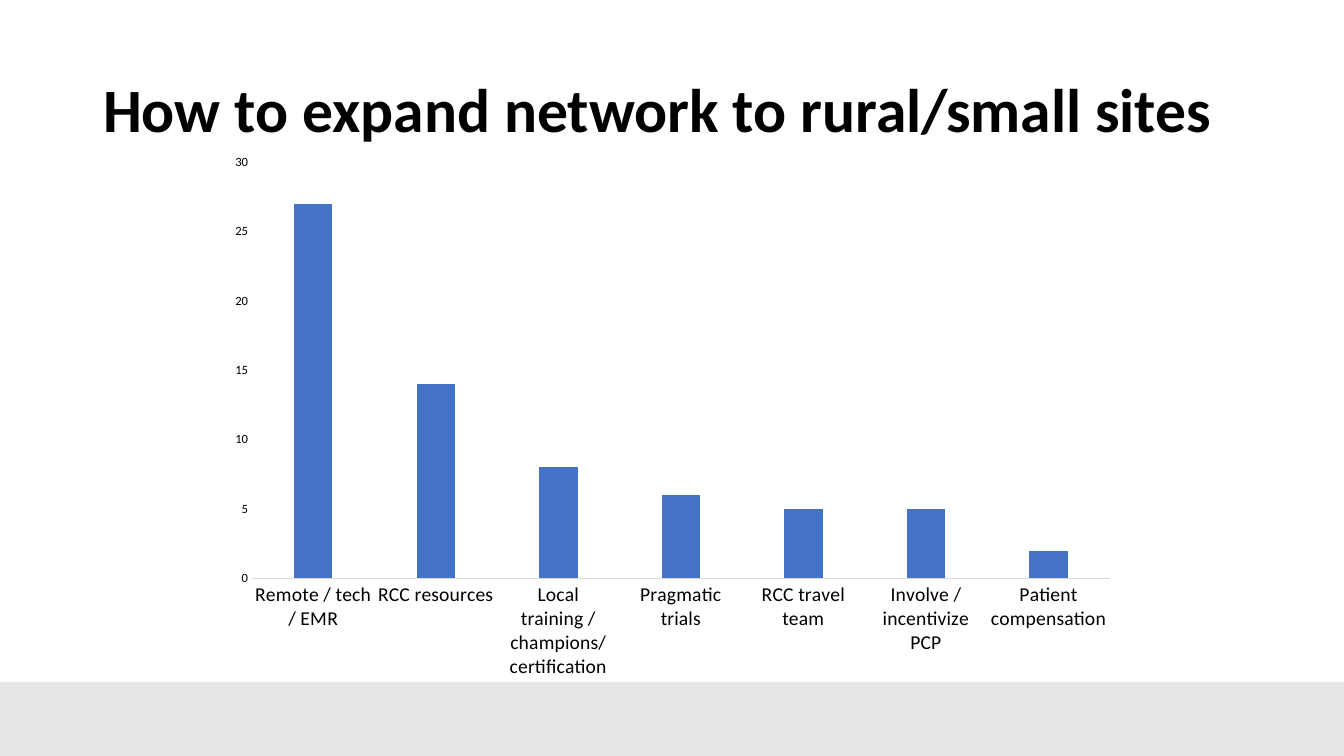
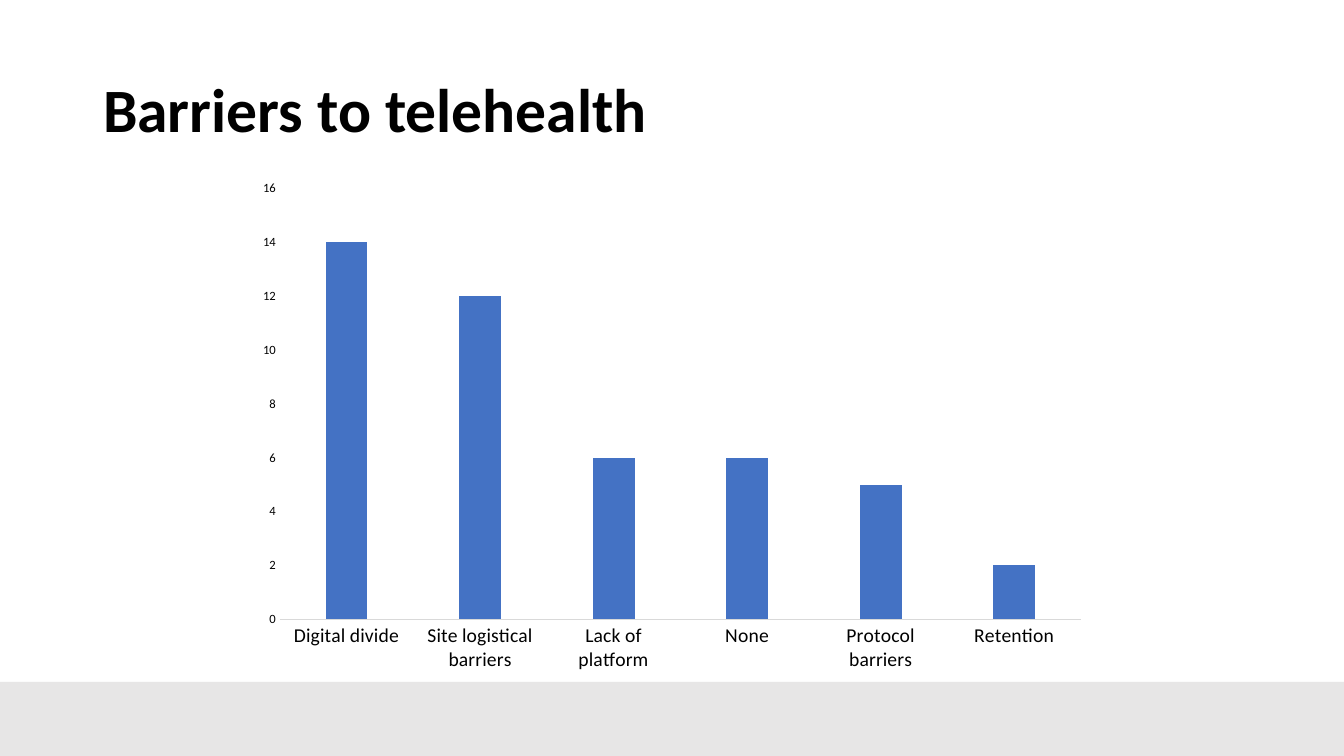
import pptx
import pptx.chart.data
import pptx.dml.color
import pptx.enum.chart
import pptx.enum.shapes
import pptx.enum.text
import pptx.util

SCALE = 914400 / 100.8


def px(count):
    return pptx.util.Emu(round(count * SCALE))


def tint(code):
    return pptx.dml.color.RGBColor.from_string(code)


class Deck:
    """Hold the shared style and the current slide."""

    FACE = "Calibri"
    INK = "000000"
    BAND = "E7E6E6"
    BAR = "4472C4"
    RULE = "D9D9D9"

    def __init__(self, width, height):
        self.file = pptx.Presentation()
        self.file.slide_width = px(width)
        self.file.slide_height = px(height)
        self.width = width
        self.height = height
        self.slide = None

    def style(self, font, size, bold=False):
        font.name = self.FACE
        font.size = pptx.util.Pt(size)
        font.bold = bold
        font.color.rgb = tint(self.INK)

    def page(self, title):
        self.slide = self.file.slides.add_slide(self.file.slide_layouts[5])
        self.band(74)
        self.title(title)

    def band(self, depth):
        band = self.slide.shapes.add_shape(
            pptx.enum.shapes.MSO_SHAPE.RECTANGLE,
            0, px(self.height - depth), px(self.width), px(depth))
        band.shadow.inherit = False
        band.fill.solid()
        band.fill.fore_color.rgb = tint(self.BAND)
        band.line.fill.background()

    def title(self, text):
        title = self.slide.shapes.title
        title.left, title.top = px(93), px(40)
        title.width, title.height = px(1159), px(146)
        frame = title.text_frame
        frame.word_wrap = True
        frame.auto_size = pptx.enum.text.MSO_AUTO_SIZE.NONE
        frame.vertical_anchor = pptx.enum.text.MSO_ANCHOR.MIDDLE
        line = frame.paragraphs[0]
        line.alignment = pptx.enum.text.PP_ALIGN.LEFT
        line.line_spacing = 0.9
        run = line.add_run()
        run.text = text
        self.style(run.font, 44, True)

    def chart(self, box, rows, top, step):
        data = pptx.chart.data.CategoryChartData()
        data.categories = [name for name, _ in rows]
        data.add_series("Series 1", [value for _, value in rows])
        chart = self.slide.shapes.add_chart(
            pptx.enum.chart.XL_CHART_TYPE.COLUMN_CLUSTERED,
            *map(px, box), data).chart
        chart.has_title = False
        chart.has_legend = False
        self.style(chart.font, 10)
        plot = chart.plots[0]
        plot.vary_by_categories = False
        plot.gap_width = 219
        plot.overlap = -27
        fill = plot.series[0].format.fill
        fill.solid()
        fill.fore_color.rgb = tint(self.BAR)
        for axis, size in ((chart.category_axis, 14), (chart.value_axis, 9)):
            axis.has_major_gridlines = False
            axis.major_tick_mark = pptx.enum.chart.XL_TICK_MARK.NONE
            axis.minor_tick_mark = pptx.enum.chart.XL_TICK_MARK.NONE
            self.style(axis.tick_labels.font, size)
        rule = chart.category_axis.format.line
        rule.color.rgb = tint(self.RULE)
        rule.width = pptx.util.Pt(0.75)
        scale = chart.value_axis
        scale.format.line.fill.background()
        scale.minimum_scale = 0
        scale.maximum_scale = top
        scale.major_unit = step


def main():
    deck = Deck(1344, 756)

    deck.page("How to expand network to rural/small sites")
    deck.chart((217, 144, 911, 546), [
        ("Remote / tech / EMR", 27),
        ("RCC resources", 14),
        ("Local training / champions/ certification", 8),
        ("Pragmatic trials", 6),
        ("RCC travel team", 5),
        ("Involve / incentivize PCP", 5),
        ("Patient compensation", 2),
    ], 30, 5)

    deck.page("Barriers to telehealth")
    deck.chart((246, 171, 852, 511), [
        ("Digital divide", 14),
        ("Site logistical barriers", 12),
        ("Lack of platform", 6),
        ("None", 6),
        ("Protocol barriers", 5),
        ("Retention", 2),
    ], 16, 2)

    deck.file.save("out.pptx")


if __name__ == "__main__":
    main()
